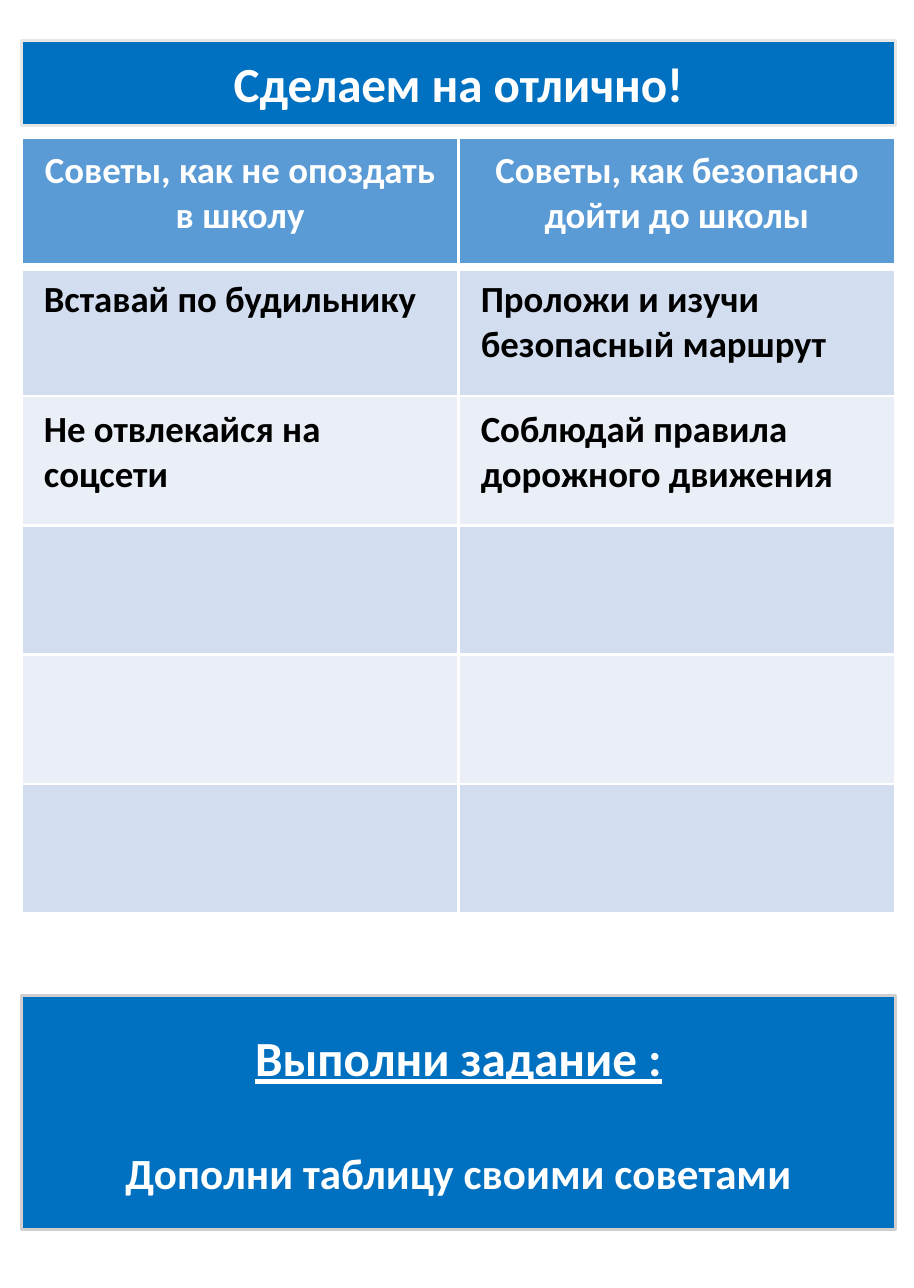
from lxml.etree import SubElement
from pptx import Presentation
from pptx.dml.color import RGBColor
from pptx.enum.shapes import MSO_SHAPE
from pptx.enum.text import MSO_ANCHOR, PP_ALIGN
from pptx.oxml.ns import qn
from pptx.util import Cm, Pt

WHITE = RGBColor(0xFF, 0xFF, 0xFF)
BLACK = RGBColor(0x00, 0x00, 0x00)
BLUE = RGBColor(0x00, 0x70, 0xC0)
HEADER_BLUE = RGBColor(0x5B, 0x9B, 0xD5)
BANDS = (RGBColor(0xEA, 0xEF, 0xF7), RGBColor(0xD2, 0xDE, 0xEF))
LIGHT_GRAY = RGBColor(0xE7, 0xE6, 0xE6)
GRAY = RGBColor(0xD0, 0xCE, 0xCE)

LEFT, WIDTH = 0.25, 10.04

ADVICE = [
    ("Советы, как не опоздать в школу", "Советы, как безопасно дойти до школы"),
    ("Вставай по будильнику", "Проложи и изучи безопасный маршрут"),
    ("Не отвлекайся на соцсети", "Соблюдай правила дорожного движения"),
    ("", ""),
    ("", ""),
    ("", ""),
]


class Leaflet:
    font = "Calibri"

    def __init__(self, slide):
        self.slide = slide

    def style(self, p, size, color, align):
        p.alignment = align
        for r in p.runs:
            r.font.name = self.font
            r.font.size = Pt(size)
            r.font.bold = True
            r.font.color.rgb = color

    def panel(self, top, height, line, lines):
        """Blue box with centred (text, size) lines; returns its paragraphs."""
        sp = self.slide.shapes.add_shape(
            MSO_SHAPE.RECTANGLE, Cm(LEFT), Cm(top), Cm(WIDTH), Cm(height))
        sp.shadow.inherit = False
        sp.fill.solid()
        sp.fill.fore_color.rgb = BLUE
        sp.line.color.rgb = line
        sp.line.width = Pt(1)
        tf = sp.text_frame
        tf.word_wrap = True
        tf.vertical_anchor = MSO_ANCHOR.MIDDLE
        tf.text = "\n".join(text for text, _ in lines)
        for p, (_, size) in zip(tf.paragraphs, lines):
            self.style(p, size, WHITE, PP_ALIGN.CENTER)
        return tf.paragraphs

    def borders(self, cell, top, bottom):
        """White cell borders, 1 pt at the sides."""
        tc_pr = cell._tc.get_or_add_tcPr()
        widths = {"a:lnL": 1, "a:lnR": 1, "a:lnT": top, "a:lnB": bottom}
        for tag, width in widths.items():
            ln = SubElement(tc_pr, qn(tag), w=str(Pt(width)))
            fill = SubElement(ln, qn("a:solidFill"))
            SubElement(fill, qn("a:srgbClr"), val=str(WHITE))

    def table(self, top, height, rows):
        table = self.slide.shapes.add_table(
            len(rows), len(rows[0]), Cm(LEFT), Cm(top), Cm(WIDTH), Cm(height)).table
        for i, row in enumerate(rows):
            header = i == 0
            fill = HEADER_BLUE if header else BANDS[i % 2]
            color = WHITE if header else BLACK
            align = PP_ALIGN.CENTER if header else PP_ALIGN.LEFT
            for j, text in enumerate(row):
                cell = table.cell(i, j)
                # Thick rule between the header and the first row
                self.borders(cell, 3 if i == 1 else 1, 3 if header else 1)
                cell.fill.solid()
                cell.fill.fore_color.rgb = fill
                cell.text_frame.text = text
                self.style(cell.text_frame.paragraphs[0], 12, color, align)


def main():
    prs = Presentation()
    prs.slide_width, prs.slide_height = Cm(10.5), Cm(14.8)
    s = Leaflet(prs.slides.add_slide(prs.slide_layouts[6]))

    # Title
    s.panel(0.47, 0.97, LIGHT_GRAY, [("Сделаем на отлично!", 16)])

    # Task
    heading, task = s.panel(11.44, 2.69, GRAY, [
        ("Выполни задание :", 16), ("Дополни таблицу своими советами", 14)])
    heading.runs[0].font.underline = True
    task.space_before = Pt(19.5)

    # Advice
    s.table(1.58, 8.92, ADVICE)

    prs.save("out.pptx")


if __name__ == "__main__":
    main()
